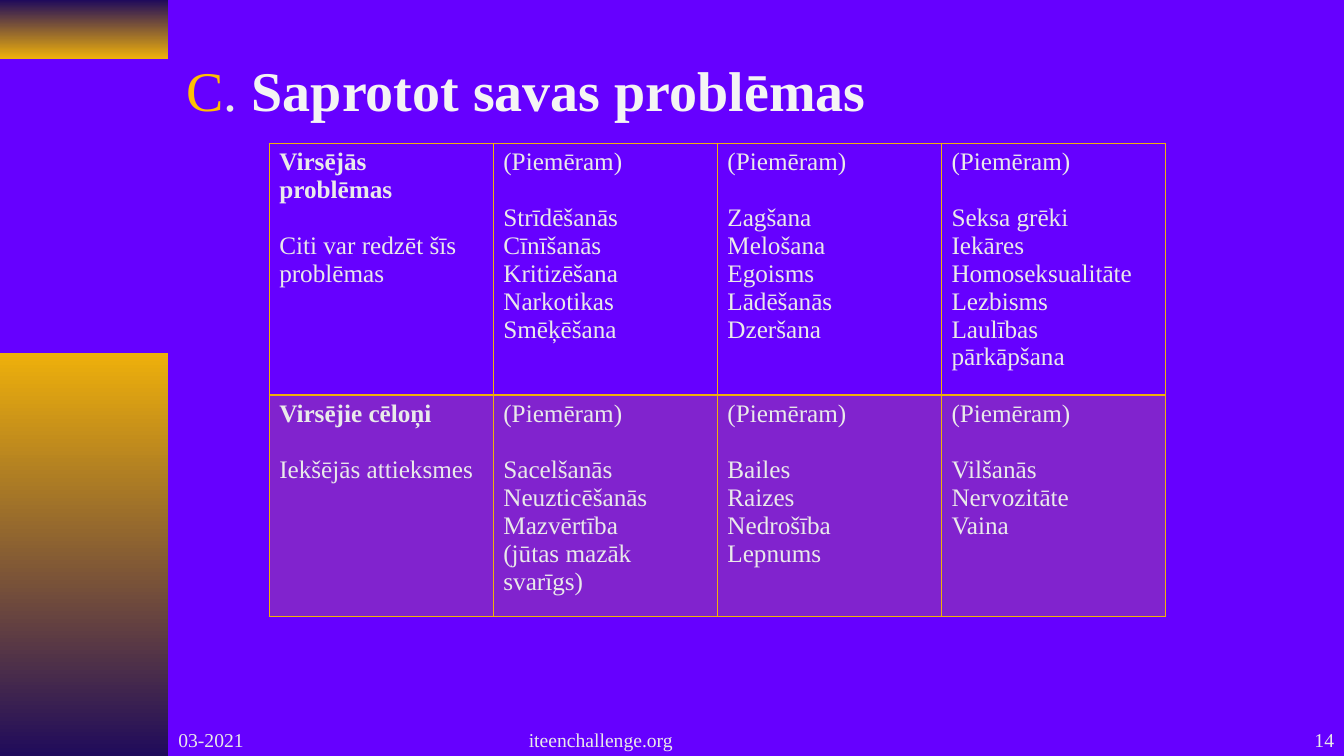
from lxml import etree
from pptx import Presentation
from pptx.dml.color import RGBColor
from pptx.enum.shapes import MSO_SHAPE
from pptx.enum.text import MSO_ANCHOR, MSO_AUTO_SIZE, PP_ALIGN
from pptx.oxml.ns import qn
from pptx.util import Inches, Pt

RECT = MSO_SHAPE.RECTANGLE
BOTTOM = MSO_ANCHOR.BOTTOM
TOP = MSO_ANCHOR.TOP
FIXED = MSO_AUTO_SIZE.NONE
LEFT, CENTER, RIGHT = PP_ALIGN.LEFT, PP_ALIGN.CENTER, PP_ALIGN.RIGHT

COLORS = {
    "back": "6600FF",
    "gold": "EEB00B",
    "navy": "200B5B",
    "pale": "EAEAEA",
    "white": "F4F4F4",
    "amber": "FFC000",
}


def write(para, text, size=18, color="pale", bold=False, align=LEFT):
    para.alignment = align
    run = para.add_run()
    run.text = text
    font = run.font
    font.name = "Times New Roman"
    font.size = Pt(size)
    font.bold = bold
    font.color.rgb = RGBColor.from_string(COLORS[color])


deck = Presentation()
deck.slide_width = Inches(13.33)
deck.slide_height = Inches(7.5)
slide = deck.slides.add_slide(deck.slide_layouts[5])
back = slide.background.fill
back.solid()
back.fore_color.rgb = RGBColor.from_string(COLORS["back"])

for top, height, tones in [(0, 0.58, ("navy", "gold")), (3.5, 4, ("gold", "navy"))]:
    band = slide.shapes.add_shape(RECT, 0, Inches(top), Inches(1.67), Inches(height))
    band.shadow.inherit = False
    band.line.fill.background()
    band.fill.gradient()
    band.fill.gradient_angle = 270
    for stop, tone in zip(band.fill.gradient_stops, tones):
        stop.color.rgb = RGBColor.from_string(COLORS[tone])

title = slide.shapes.title
title.left, title.top = Inches(1.75), Inches(0.5)
title.width, title.height = Inches(7.01), Inches(0.77)
frame = title.text_frame
frame.auto_size = FIXED
frame.word_wrap = False
frame.vertical_anchor = BOTTOM
for text, color, bold in [
    ("C", "amber", False),
    (". ", "pale", False),
    ("Saprotot savas problēmas", "white", True),
]:
    write(frame.paragraphs[0], text, size=40, color=color, bold=bold)

ROWS = [
    [
        ["Virsējās problēmas", "Citi var redzēt šīs problēmas"],
        ["(Piemēram)", "Strīdēšanās", "Cīnīšanās", "Kritizēšana", "Narkotikas", "Smēķēšana"],
        ["(Piemēram)", "Zagšana", "Melošana", "Egoisms", "Lādēšanās", "Dzeršana"],
        ["(Piemēram)", "Seksa grēki", "Iekāres", "Homoseksualitāte", "Lezbisms",
         "Laulības pārkāpšana"],
    ],
    [
        ["Virsējie cēloņi", "Iekšējās attieksmes"],
        ["(Piemēram)", "Sacelšanās", "Neuzticēšanās", "Mazvērtība", "(jūtas mazāk svarīgs)"],
        ["(Piemēram)", "Bailes", "Raizes", "Nedrošība", "Lepnums"],
        ["(Piemēram)", "Vilšanās", "Nervozitāte", "Vaina"],
    ],
]

table = slide.shapes.add_table(
    2, 4, Inches(2.67), Inches(1.42), Inches(8.89), Inches(4.7)
).table
table.first_row = False
table.horz_banding = False
for row, height in zip(table.rows, (2.5, 2.2)):
    row.height = Inches(height)

for r, row in enumerate(ROWS):
    for c, lines in enumerate(row):
        cell = table.cell(r, c)
        cell.vertical_anchor = TOP
        frame = cell.text_frame
        for i, line in enumerate(lines):
            para = frame.add_paragraph() if i else frame.paragraphs[0]
            if i == 1:
                para.space_before = Pt(19.9)
            write(para, line, bold=c == 0 and i == 0)
        props = cell._tc.get_or_add_tcPr()
        if r == 0:
            cell.fill.background()
        else:
            cell.fill.solid()
            cell.fill.fore_color.rgb = RGBColor.from_string(COLORS["gold"])
            tint = props.find(".//" + qn("a:srgbClr"))
            etree.SubElement(tint, qn("a:alpha"), val="20000")
        for i, side in enumerate("LRTB"):
            wide = 2 if (r, side) in [(0, "B"), (1, "T")] else 1
            edge = etree.Element(qn("a:ln" + side), w=str(Pt(wide)))
            ink = etree.SubElement(edge, qn("a:solidFill"))
            etree.SubElement(ink, qn("a:srgbClr"), val=COLORS["gold"])
            props.insert(i, edge)

for text, left, width, align in [
    ("03-2021", 1.67, 2.78, LEFT),
    ("iteenchallenge.org", 3.17, 5.58, CENTER),
    ("14", 10.55, 2.78, RIGHT),
]:
    box = slide.shapes.add_textbox(Inches(left), Inches(7), Inches(width), Inches(0.5))
    frame = box.text_frame
    frame.word_wrap = True
    frame.vertical_anchor = BOTTOM
    write(frame.paragraphs[0], text, size=14, align=align)

deck.save("out.pptx")
